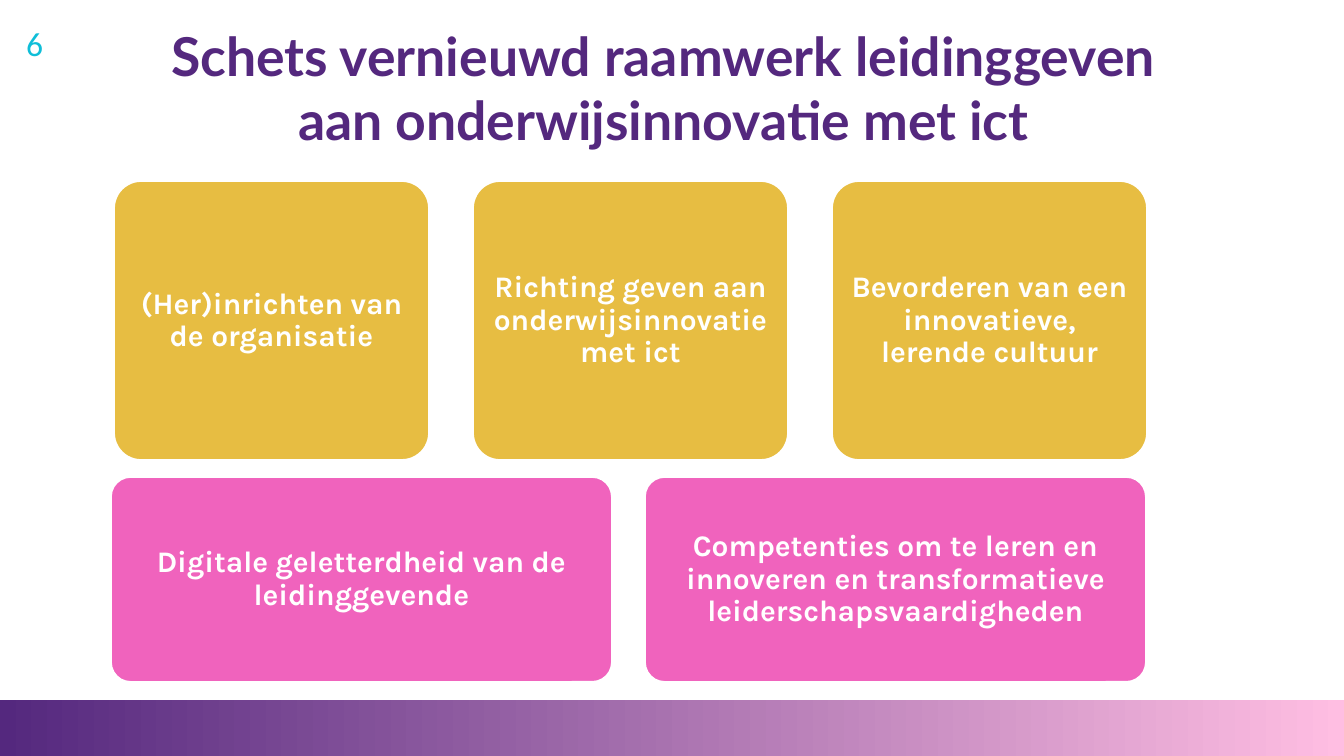
import dataclasses

import pptx
import pptx.dml.color
import pptx.enum.shapes
import pptx.enum.text
import pptx.util

SLIDE_WIDTH, SLIDE_HEIGHT = 1344, 756
EMU_PER_PX = 9144000 / SLIDE_WIDTH
SHAPES = pptx.enum.shapes.MSO_SHAPE
ALIGN = pptx.enum.text.PP_ALIGN
ANCHOR = pptx.enum.text.MSO_ANCHOR


@dataclasses.dataclass(frozen=True)
class Theme:
    purple: str = "54287E"
    light_pink: str = "FFBEE2"
    gold: str = "E7BD42"
    pink: str = "F063BD"
    cyan: str = "0FBED8"
    white: str = "FFFFFF"
    title_size: float = 28.7
    card_size: float = 16
    number_size: float = 18


THEME = Theme()


def px(value):
    return pptx.util.Emu(round(value * EMU_PER_PX))


def rgb(value):
    return pptx.dml.color.RGBColor.from_string(value)


def apply_format(target, values):
    for name, value in values.items():
        setattr(target, name, value)


def write_text(shape, text, font, size, color, bold=False, frame=None, paragraph=None):
    text_frame = shape.text_frame
    apply_format(text_frame, {"word_wrap": True, **(frame or {})})
    text_frame.text = text
    first = text_frame.paragraphs[0]
    apply_format(first, paragraph or {})
    for run in first.runs:
        apply_format(run.font, {"name": font, "size": pptx.util.Pt(size), "bold": bold})
        run.font.color.rgb = rgb(color)


def add_label(slide, box, text, **style):
    shape = slide.shapes.add_textbox(*map(px, box))
    write_text(shape, text, **style)


def add_gradient_bar(slide, box, colors):
    bar = slide.shapes.add_shape(SHAPES.RECTANGLE, *map(px, box))
    bar.shadow.inherit = False
    bar.line.fill.background()
    bar.fill.gradient()
    bar.fill.gradient_angle = 0
    for position, (stop, color) in enumerate(zip(bar.fill.gradient_stops, colors)):
        stop.position = position
        stop.color.rgb = rgb(color)


def add_card(slide, box, text, color):
    card = slide.shapes.add_shape(SHAPES.ROUNDED_RECTANGLE, *map(px, box))
    card.adjustments[0] = 0.1
    card.shadow.inherit = False
    card.fill.solid()
    card.fill.fore_color.rgb = rgb(color)
    card.line.color.rgb = rgb(THEME.white)
    card.line.width = pptx.util.Pt(2)
    margins = {f"margin_{side}": px(9) for side in ("left", "top", "right", "bottom")}
    write_text(
        card, text, "Karla", THEME.card_size, THEME.white, bold=True,
        frame={"vertical_anchor": ANCHOR.MIDDLE, **margins},
        paragraph={"alignment": ALIGN.CENTER, "line_spacing": 0.9},
    )


def add_card_row(slide, left, top, width, height, step, color, texts):
    for column, text in enumerate(texts):
        add_card(slide, (left + column * step, top, width, height), text, color)


def main():
    presentation = pptx.Presentation()
    presentation.slide_width = px(SLIDE_WIDTH)
    presentation.slide_height = px(SLIDE_HEIGHT)
    slide = presentation.slides.add_slide(presentation.slide_layouts[6])

    # Footer band
    add_gradient_bar(slide, (0, 700, SLIDE_WIDTH, 56), (THEME.purple, THEME.light_pink))

    # Title
    add_label(
        slide, (67, 30, 1193, 128),
        "Schets vernieuwd raamwerk leidinggeven\vaan onderwijsinnovatie met ict",
        font="Lato", size=THEME.title_size, color=THEME.purple, bold=True,
        frame={"vertical_anchor": ANCHOR.BOTTOM},
        paragraph={"alignment": ALIGN.CENTER},
    )

    # Framework: three leadership tasks above two foundations
    add_card_row(slide, 113, 180, 317, 281, 359, THEME.gold, (
        "(Her)inrichten van de organisatie",
        "Richting geven aan onderwijsinnovatie met ict",
        "Bevorderen van een innovatieve, lerende cultuur",
    ))
    add_card_row(slide, 110, 476, 503, 207, 534, THEME.pink, (
        "Digitale geletterdheid van de leidinggevende",
        "Competenties om te leren en innoveren en transformatieve leiderschapsvaardigheden",
    ))

    # Slide number
    add_label(slide, (13, 16, 54, 54), "6",
              font="Calibri", size=THEME.number_size, color=THEME.cyan)

    presentation.save("out.pptx")


if __name__ == "__main__":
    main()
